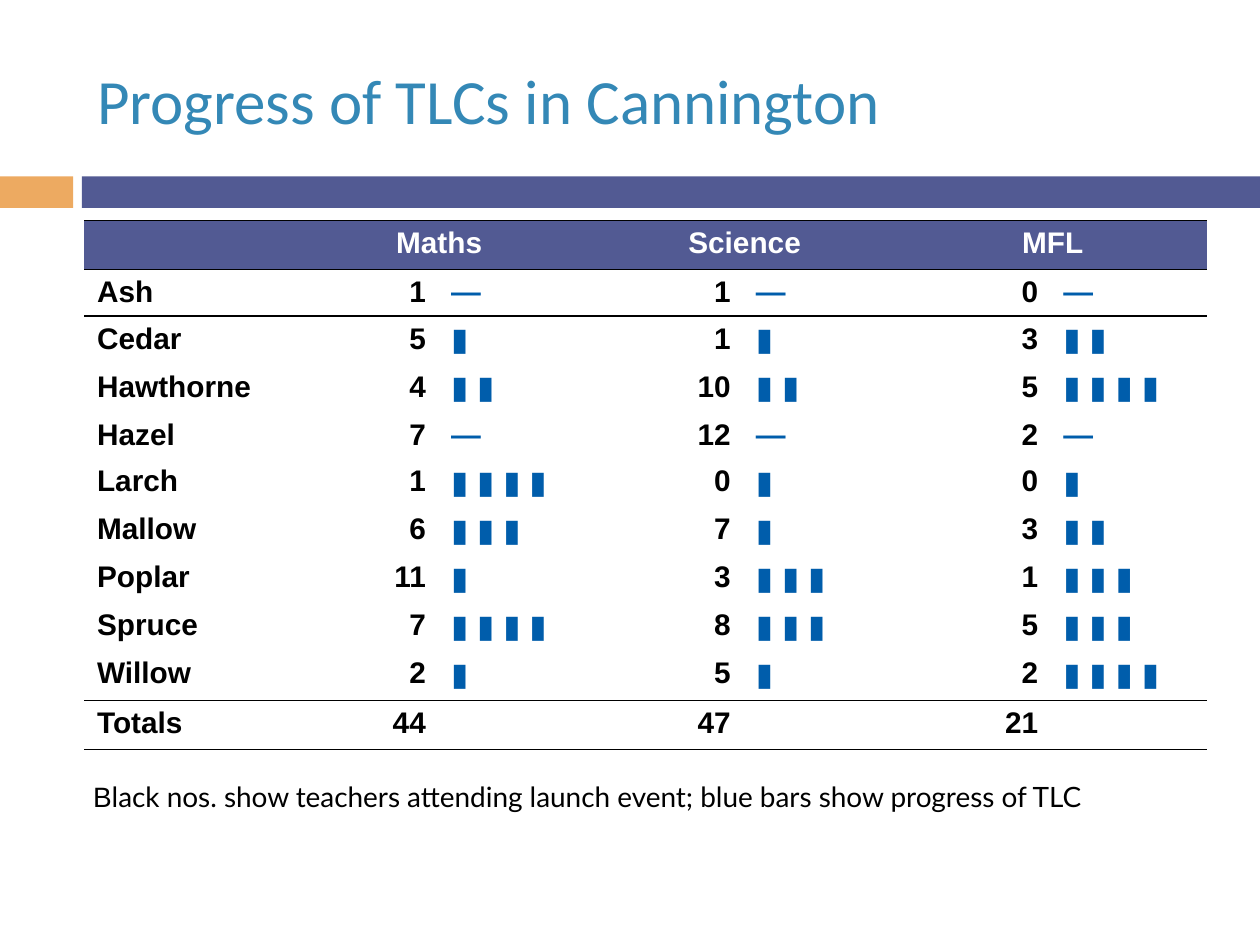
from lxml import etree
from pptx import Presentation
from pptx.dml.color import RGBColor
from pptx.enum.shapes import MSO_SHAPE
from pptx.enum.text import MSO_ANCHOR, PP_ALIGN
from pptx.oxml.ns import qn
from pptx.util import Inches, Pt

ORANGE = RGBColor(0xED, 0xAA, 0x61)
INDIGO = RGBColor(0x52, 0x5A, 0x93)
TITLE_BLUE = RGBColor(0x34, 0x88, 0xB6)
BAR_BLUE = RGBColor(0x00, 0x5D, 0xAB)
BLACK = RGBColor(0, 0, 0)
WHITE = RGBColor(0xFF, 0xFF, 0xFF)
NO_STYLE = "{2D5ABB26-0587-4C30-8999-92F81FD0307C}"

SUBJECTS = ["Maths", "Science", "MFL"]
# Per house: (teachers at launch, progress bars) for each subject
HOUSES = [
    ("Ash", (1, 0), (1, 0), (0, 0)),
    ("Cedar", (5, 1), (1, 1), (3, 2)),
    ("Hawthorne", (4, 2), (10, 2), (5, 4)),
    ("Hazel", (7, 0), (12, 0), (2, 0)),
    ("Larch", (1, 4), (0, 1), (0, 1)),
    ("Mallow", (6, 3), (7, 1), (3, 2)),
    ("Poplar", (11, 1), (3, 3), (1, 3)),
    ("Spruce", (7, 4), (8, 3), (5, 3)),
    ("Willow", (2, 1), (5, 1), (2, 4)),
]
TOTALS = [44, 47, 21]
COLS = [1.61, 1.2, 1.21, 1.21, 1.23, 1.21, 1.24]
ROW_H = 0.37


def add_run(p, text, size, font, color, bold=False):
    r = p.add_run()
    r.text = text
    r.font.size, r.font.name, r.font.bold = Pt(size), font, bold
    r.font.color.rgb = color


def add_border(cell, side):
    ln = etree.SubElement(cell._tc.get_or_add_tcPr(), qn(f"a:ln{side}"), w=str(Pt(1)))
    fill = etree.SubElement(ln, qn("a:solidFill"))
    etree.SubElement(fill, qn("a:srgbClr"), val=str(BLACK))


prs = Presentation()
prs.slide_width, prs.slide_height = Inches(10), Inches(7.5)
s = prs.slides.add_slide(prs.slide_layouts[5])

# Title
title = s.shapes.title
title.left, title.top = Inches(0.67), Inches(0.25)
title.width, title.height = Inches(8.92), Inches(1.08)
tf = title.text_frame
tf.vertical_anchor = MSO_ANCHOR.MIDDLE
p = tf.paragraphs[0]
p.alignment = PP_ALIGN.LEFT
add_run(p, "Progress of TLCs in Cannington", 36, "Calibri", TITLE_BLUE)

# Band under the title
for left, width, color in [(0, 0.58, ORANGE), (0.65, 9.35, INDIGO)]:
    sp = s.shapes.add_shape(MSO_SHAPE.RECTANGLE, Inches(left), Inches(1.4),
                            Inches(width), Inches(0.25))
    sp.shadow.inherit = False
    sp.fill.solid()
    sp.fill.fore_color.rgb = color
    sp.line.fill.background()

# Rows of the table as text
rows = [[""] + [t for name in SUBJECTS for t in (name, "")]]
for house, *scores in HOUSES:
    rows.append([house] + [t for count, bars in scores
                           for t in (str(count), " ".join("▮" * bars) or "—")])
rows.append(["Totals"] + [t for total in TOTALS for t in (str(total), "")])
last = len(rows) - 1

# Table
table = s.shapes.add_table(len(rows), len(COLS), Inches(0.67), Inches(1.75),
                           Inches(sum(COLS)), Inches(ROW_H * len(rows))).table
table.first_row = table.horz_banding = False
table._tbl.tblPr.find(qn("a:tableStyleId")).text = NO_STYLE
for col, width in zip(table.columns, COLS):
    col.width = Inches(width)
for row in table.rows:
    row.height = Inches(ROW_H)
table.rows[last - 1].height = Inches(0.4)

for i, row in enumerate(rows):
    for j, text in enumerate(row):
        cell = table.cell(i, j)
        if i in (0, 1, last):
            add_border(cell, "T")
        if i in (0, last - 1, last):
            add_border(cell, "B")
        if i == 0:
            cell.fill.solid()
            cell.fill.fore_color.rgb = INDIGO
        else:
            cell.fill.background()

        p = cell.text_frame.paragraphs[0]
        is_bar = i > 0 and j > 0 and j % 2 == 0
        if i == 0:
            p.alignment, color = PP_ALIGN.CENTER, WHITE
        elif is_bar:
            p.alignment, color = PP_ALIGN.LEFT, BAR_BLUE
        else:
            p.alignment, color = PP_ALIGN.RIGHT if j else PP_ALIGN.LEFT, BLACK
        if text:
            add_run(p, text, 18 if "▮" in text else 17, "Arial", color, True)
        else:
            # Keep empty cells from stretching their row
            p._p.get_or_add_endParaRPr().set("sz", "1700")

for j in (1, 3, 5):
    table.cell(0, j).merge(table.cell(0, j + 1))

# Key to the table
tf = s.shapes.add_textbox(Inches(0.64), Inches(6.14), Inches(8.99), Inches(0.37)).text_frame
tf.word_wrap = True
p = tf.paragraphs[0]
add_run(p, "B", 16, "Arial", BLACK)
add_run(p, "lack nos. show teachers attending launch event; blue bars show progress of TLC",
        16, "Lato", BLACK)

prs.save("out.pptx")
